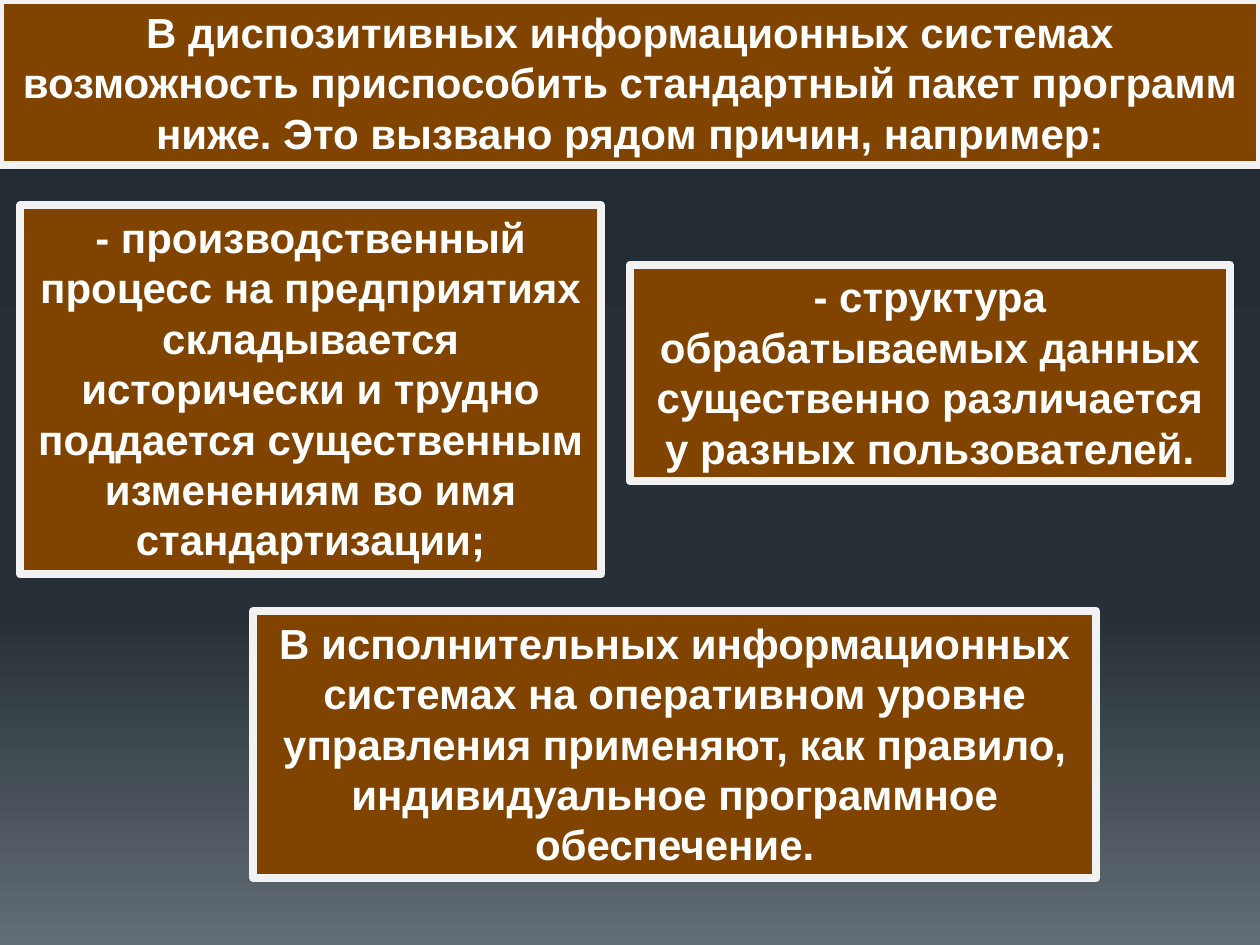
from copy import deepcopy

from pptx import Presentation
from pptx.dml.color import RGBColor
from pptx.enum.shapes import MSO_SHAPE
from pptx.enum.text import MSO_ANCHOR, MSO_AUTO_SIZE, PP_ALIGN
from pptx.oxml.ns import qn
from pptx.util import Inches, Pt

RECTANGLE = MSO_SHAPE.RECTANGLE
TOP = MSO_ANCHOR.TOP
GROW = MSO_AUTO_SIZE.SHAPE_TO_FIT_TEXT
CENTER = PP_ALIGN.CENTER

COLORS = {"panel": "804300", "border": "F2F2F2", "text": "FFFFFF"}
BACKDROP = [(0, "242C33"), (0.65, "273037"), (1, "636D76")]
PANELS = [
    ("В диспозитивных информационных системах возможность приспособить "
     "стандартный пакет программ ниже. Это вызвано рядом причин, например:",
     (0, 0, 10, 1.31)),
    ("- производственный процесс на предприятиях складывается исторически "
     "и трудно поддается существенным изменениям во имя стандартизации;",
     (0.16, 1.63, 4.61, 2.93)),
    ("- структура обрабатываемых данных существенно различается "
     "у разных пользователей.",
     (5, 2.1, 4.76, 1.72)),
    ("В исполнительных информационных системах на оперативном уровне "
     "управления применяют, как правило, индивидуальное программное "
     "обеспечение.",
     (2.01, 4.85, 6.69, 2.12)),
]


def color(name):
    return RGBColor.from_string(COLORS[name])


def paint_backdrop(slide):
    fill = slide.background.fill
    fill.gradient()
    fill.gradient_angle = 270
    stop_list = next(slide.element.iter(qn("a:gsLst")))
    stop_list.insert(1, deepcopy(stop_list[0]))
    for stop, (position, shade) in zip(fill.gradient_stops, BACKDROP):
        stop.position = position
        stop.color.rgb = RGBColor.from_string(shade)


def add_panel(slide, text, place):
    panel = slide.shapes.add_shape(RECTANGLE, *map(Inches, place))
    panel.shadow.inherit = False
    panel.fill.solid()
    panel.fill.fore_color.rgb = color("panel")
    panel.line.color.rgb = color("border")
    panel.line.width = Pt(4.5)

    frame = panel.text_frame
    frame.word_wrap = True
    frame.auto_size = GROW
    frame.vertical_anchor = TOP
    paragraph = frame.paragraphs[0]
    paragraph.text = text
    paragraph.alignment = CENTER
    font = paragraph.font
    font.name = "Arial"
    font.size = Pt(24)
    font.bold = True
    font.color.rgb = color("text")


def main():
    deck = Presentation()
    deck.slide_width, deck.slide_height = Inches(10), Inches(7.5)
    slide = deck.slides.add_slide(deck.slide_layouts[6])
    paint_backdrop(slide)
    for text, place in PANELS:
        add_panel(slide, text, place)
    deck.save("out.pptx")


if __name__ == "__main__":
    main()
